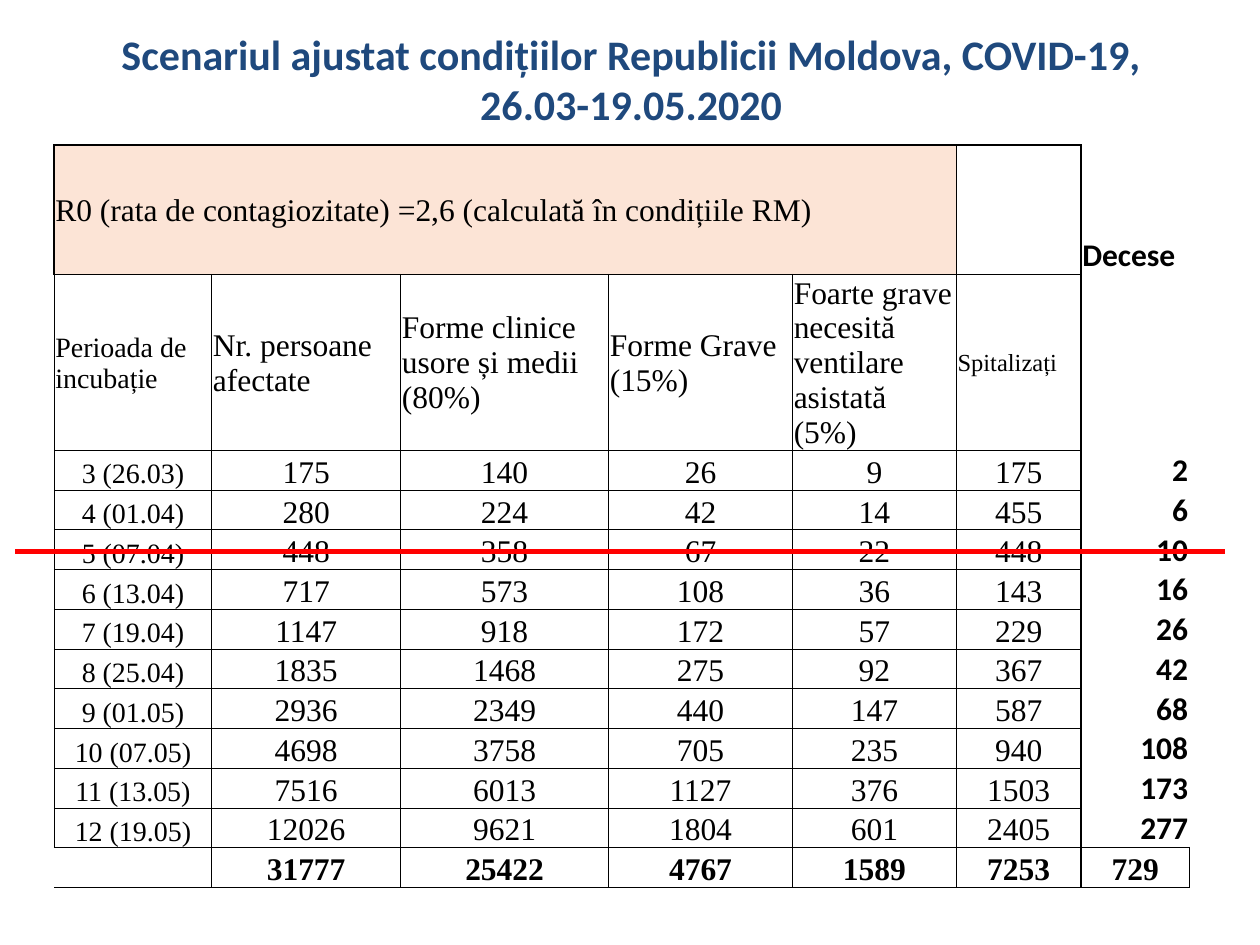
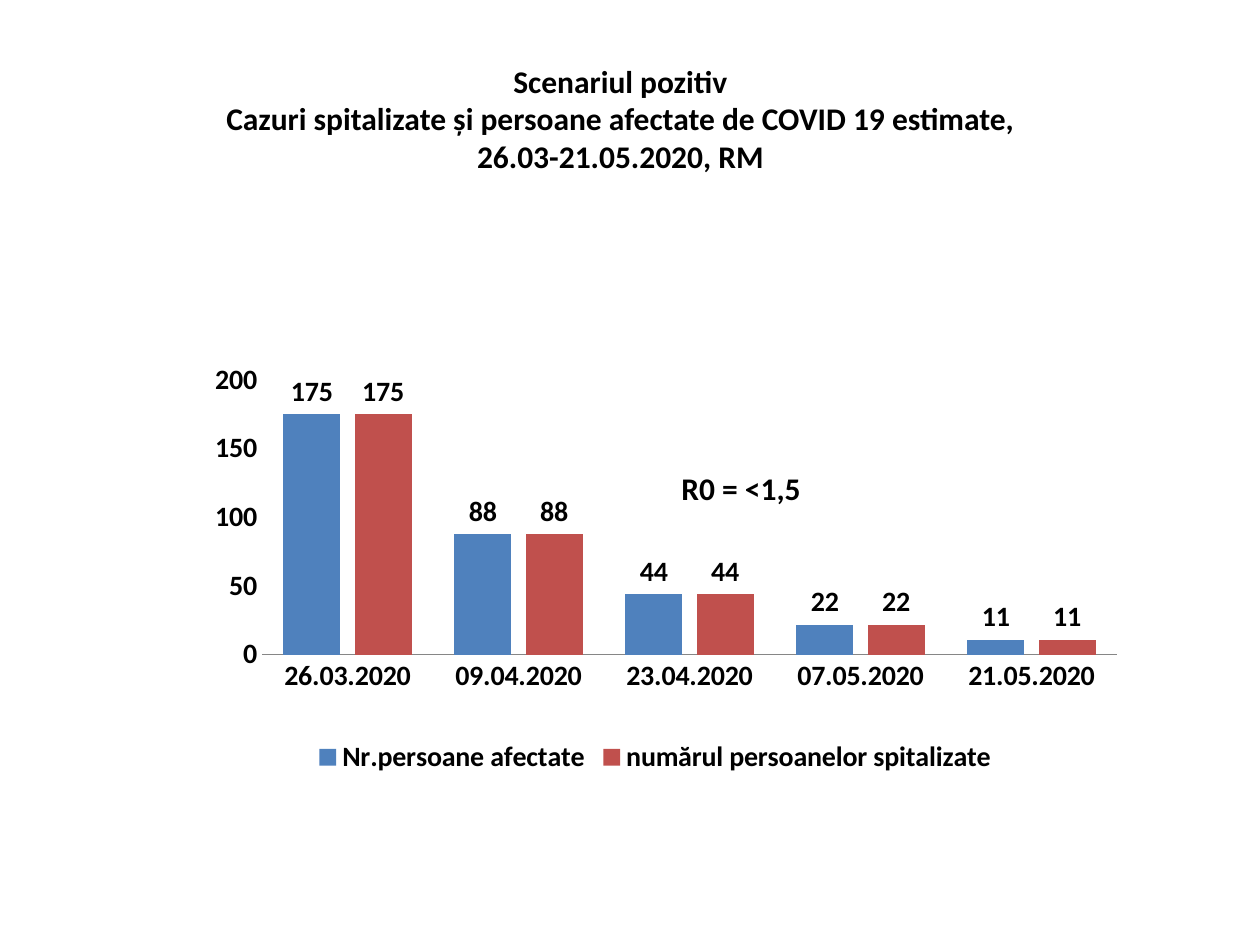
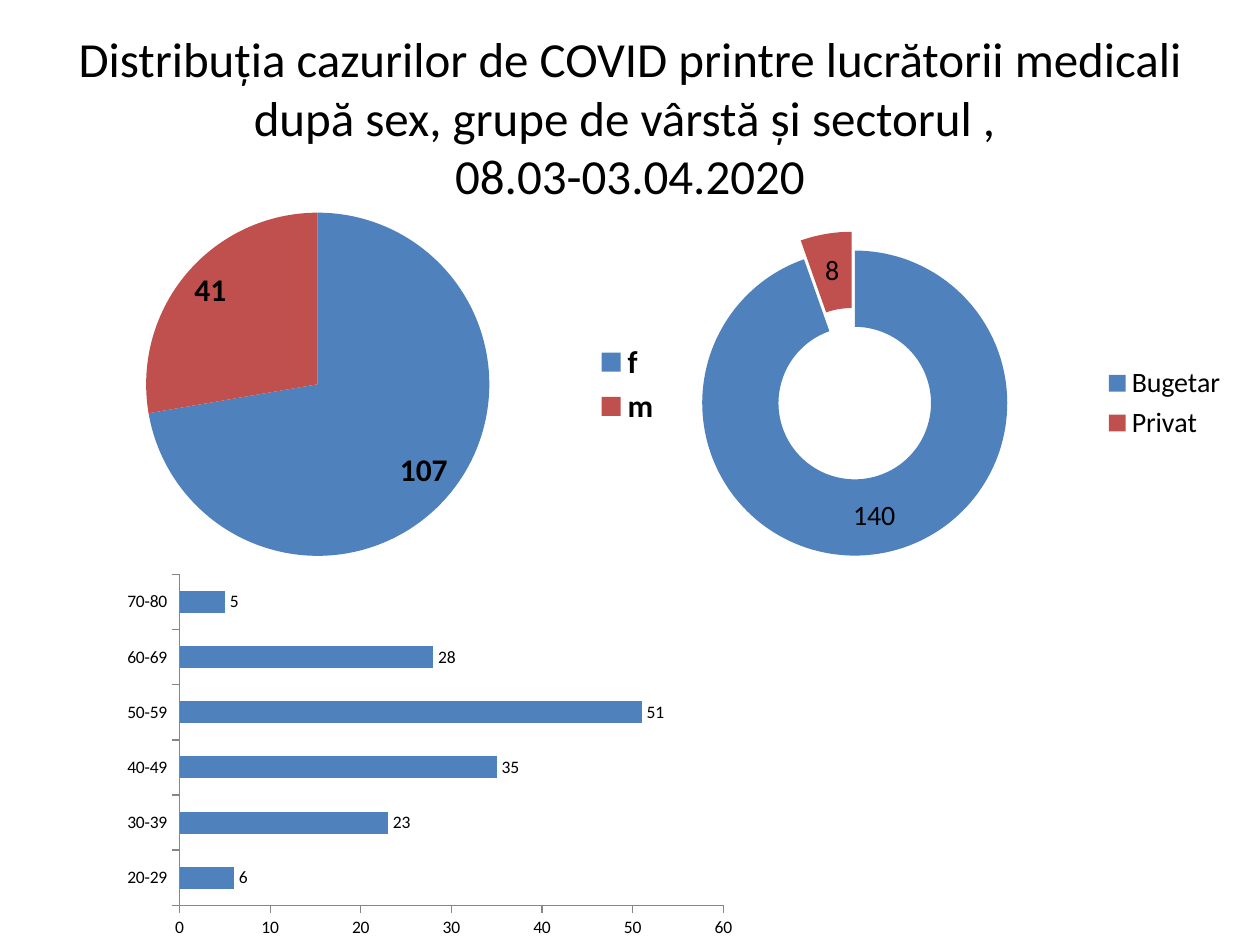
from dataclasses import dataclass

from pptx import Presentation
from pptx.chart.data import CategoryChartData
from pptx.dml.color import RGBColor
from pptx.enum.chart import XL_CHART_TYPE, XL_LABEL_POSITION, XL_LEGEND_POSITION, XL_TICK_MARK
from pptx.enum.shapes import MSO_CONNECTOR
from pptx.enum.text import MSO_ANCHOR, MSO_AUTO_SIZE, PP_ALIGN
from pptx.oxml import parse_xml
from pptx.oxml.ns import nsdecls
from pptx.util import Pt

COLUMN, BAR = XL_CHART_TYPE.COLUMN_CLUSTERED, XL_CHART_TYPE.BAR_CLUSTERED
PIE, RING = XL_CHART_TYPE.PIE, XL_CHART_TYPE.DOUGHNUT
BELOW, BESIDE = XL_LEGEND_POSITION.BOTTOM, XL_LEGEND_POSITION.RIGHT
OUT_END = XL_LABEL_POSITION.OUTSIDE_END
NO_TICK, OUT_TICK = XL_TICK_MARK.NONE, XL_TICK_MARK.OUTSIDE
LEFT, CENTER, RIGHT = PP_ALIGN.LEFT, PP_ALIGN.CENTER, PP_ALIGN.RIGHT
MIDDLE, BOTTOM = MSO_ANCHOR.MIDDLE, MSO_ANCHOR.BOTTOM
TITLE_ONLY, BLANK = 5, 6
PX = 9144  # 100 px to the inch


@dataclass(frozen=True)
class Theme:
    sans: str = "Calibri"
    serif: str = "Times New Roman"
    ink: str = "000000"
    navy: str = "1F497D"
    peach: str = "FCE4D6"
    red: str = "FF0000"
    axis: str = "868686"
    series: tuple = ("4F81BD", "C0504D")
    large: int = 28
    head: int = 24
    body: int = 18
    label: int = 16
    note: int = 14
    small: int = 10
    fine: float = 0.5
    heavy: float = 1
    rule: float = 3


T = Theme()

COLS = (125, 150, 165, 146, 130, 99, 86)
ROWS = (103, 139) + (31,) * 11
LAST, STAY, DEATHS = len(ROWS) - 1, 5, 6
CELLS = (
    ("R0 (rata de contagiozitate) =2,6 (calculată în condițiile RM)",
     "", "", "", "", "", "Decese"),
    ("Perioada de incubație", "Nr. persoane afectate",
     "Forme clinice usore și medii (80%)", "Forme Grave (15%)",
     "Foarte grave necesită ventilare asistată (5%)", "Spitalizați", ""),
    ("3 (26.03)", 175, 140, 26, 9, 175, 2),
    ("4 (01.04)", 280, 224, 42, 14, 455, 6),
    ("5 (07.04)", 448, 358, 67, 22, 448, 10),
    ("6 (13.04)", 717, 573, 108, 36, 143, 16),
    ("7 (19.04)", 1147, 918, 172, 57, 229, 26),
    ("8 (25.04)", 1835, 1468, 275, 92, 367, 42),
    ("9 (01.05)", 2936, 2349, 440, 147, 587, 68),
    ("10 (07.05)", 4698, 3758, 705, 235, 940, 108),
    ("11 (13.05)", 7516, 6013, 1127, 376, 1503, 173),
    ("12 (19.05)", 12026, 9621, 1804, 601, 2405, 277),
    ("", 31777, 25422, 4767, 1589, 7253, 729),
)


def rgb(code):
    return RGBColor.from_string(code)


def emu(box):
    return [n * PX for n in box]


def style(font, size, color=T.ink, bold=False, face=T.sans):
    font.name, font.size, font.bold = face, Pt(size), bold
    font.color.rgb = rgb(color)


def write(frame, text, size, align=CENTER, **look):
    frame.text = text
    for para in frame.paragraphs:
        para.alignment = align
        for run in para.runs:
            style(run.font, size, **look)


def add_title(slide, box, text, size, **look):
    title = slide.shapes.title
    title.left, title.top, title.width, title.height = emu(box)
    frame = title.text_frame
    write(frame, text, size, **look)
    frame.auto_size = MSO_AUTO_SIZE.NONE
    frame.vertical_anchor = MIDDLE


def add_text(slide, box, text, align=LEFT):
    frame = slide.shapes.add_textbox(*emu(box)).text_frame
    frame.word_wrap = True
    write(frame, text, T.body, align, bold=True)


def edges(row, col):
    """Return the line width of each side that a cell draws."""
    if col == DEATHS and row < LAST:
        sides = {"L": T.heavy}
    else:
        sides = dict.fromkeys("LRTB", T.heavy if row in (0, LAST) else T.fine)
    if row == 1 and col < DEATHS:
        sides["T"] = T.heavy
    if row == LAST - 1:
        sides["B"] = T.heavy
    if col == STAY:
        sides["R"] = T.heavy
    if row == LAST and col == 0:
        del sides["L"]
    return sides


def draw_edges(cell, sides):
    props = cell._tc.get_or_add_tcPr()
    for side in "LRTB":
        width = Pt(sides.get(side, 0))
        fill = (f'<a:solidFill><a:srgbClr val="{T.ink}"/></a:solidFill>'
                if width else "<a:noFill/>")
        props.append(parse_xml(
            f'<a:ln{side} {nsdecls("a")} w="{width}">{fill}</a:ln{side}>'))


def cell_look(row, col):
    """Return size, alignment, weight and face for a cell."""
    size, align = T.body, LEFT if row < 2 else CENTER
    if col == 0 and row > 0:
        size = T.label
    elif col == STAY and row == 1:
        size = T.note
    deaths = col == DEATHS and row < LAST
    if deaths and row > 1:
        align = RIGHT
    return dict(size=size, align=align, bold=deaths or row == LAST,
                face=T.sans if deaths else T.serif)


def add_forecast(slide, left, top):
    box = emu((left, top, sum(COLS), sum(ROWS)))
    table = slide.shapes.add_table(len(ROWS), len(COLS), *box).table
    table.first_row = table.horz_banding = False
    for col, width in zip(table.columns, COLS):
        col.width = width * PX
    for row, height in zip(table.rows, ROWS):
        row.height = height * PX
    for r, line in enumerate(CELLS):
        for c, value in enumerate(line):
            cell = table.cell(r, c)
            cell.margin_left = cell.margin_right = cell.margin_top = PX
            cell.margin_bottom = 0
            top_head = r == 0 and c == DEATHS
            cell.vertical_anchor = BOTTOM if r > 1 or top_head else MIDDLE
            write(cell.text_frame, str(value), **cell_look(r, c))
            draw_edges(cell, edges(r, c))
            cell.fill.background()
    table.cell(0, 0).merge(table.cell(0, STAY - 1))
    banner = table.cell(0, 0).fill
    banner.solid()
    banner.fore_color.rgb = rgb(T.peach)


def add_rule(slide, left, right, y):
    line = slide.shapes.add_connector(
        MSO_CONNECTOR.STRAIGHT, *emu((left, y, right, y)))
    line.line.color.rgb = rgb(T.red)
    line.line.width = Pt(T.rule)
    line._element.spPr.append(parse_xml(f'<a:effectLst {nsdecls("a")}/>'))


def add_chart(slide, box, kind, cats, series, size, bold=False, legend=None):
    data = CategoryChartData(number_format="0")
    data.categories = cats
    for name, values in series:
        data.add_series(name, values)
    chart = slide.shapes.add_chart(kind, *emu(box), data).chart
    chart.has_title = False
    style(chart.font, size, bold=bold)
    chart.has_legend = legend is not None
    if legend is not None:
        chart.legend.position = legend
        chart.legend.include_in_layout = False
    for item in chart.plots[0].series:
        item.data_labels.show_value = True
        style(item.data_labels.font, size, bold=bold)
    return chart


def paint(part, color):
    part.format.fill.solid()
    part.format.fill.fore_color.rgb = rgb(color)


def add_bars(slide, box, kind, cats, series, size, gap, overlap, tick,
             top, step, **look):
    chart = add_chart(slide, box, kind, cats, series, size, **look)
    plot = chart.plots[0]
    plot.vary_by_categories = False
    plot.gap_width, plot.overlap = gap, overlap
    for item, color in zip(plot.series, T.series):
        paint(item, color)
        item.data_labels.position = OUT_END
    for axis in (chart.category_axis, chart.value_axis):
        axis.major_tick_mark, axis.minor_tick_mark = tick, NO_TICK
        axis.has_major_gridlines = False
        axis.format.line.color.rgb = rgb(T.axis)
    scale = chart.value_axis
    scale.minimum_scale, scale.maximum_scale = 0, top
    scale.major_unit = step
    return chart


def add_round(slide, box, kind, cats, values, size, **look):
    """Add a pie or ring with one colour for each slice."""
    chart = add_chart(slide, box, kind, cats, [("Series 1", values)], size,
                      legend=BESIDE, **look)
    plot = chart.plots[0]
    plot.vary_by_categories = True
    for i, color in enumerate(T.series):
        paint(plot.series[0].points[i], color)
    return chart


def pull_slice(chart, index, share):
    mark = chart._chartSpace.xpath(f'.//c:dPt/c:idx[@val="{index}"]')[0]
    mark.addnext(parse_xml(f'<c:explosion {nsdecls("c")} val="{share}"/>'))


def set_plot(chart, x, y, w, h):
    """Fix the inner plot area as shares of the chart."""
    area = chart._chartSpace.chart.plotArea
    for old in area.xpath("c:layout"):
        area.remove(old)
    parts = "".join(f'<c:{tag} val="{value}"/>' for tag, value in (
        ("layoutTarget", "inner"), ("xMode", "edge"), ("yMode", "edge"),
        ("x", x), ("y", y), ("w", w), ("h", h)))
    area.insert(0, parse_xml(
        f'<c:layout {nsdecls("c")}><c:manualLayout>{parts}'
        '</c:manualLayout></c:layout>'))


def forecast_slide(slide):
    add_title(slide, (51, 0, 900, 125),
              "Scenariul ajustat condițiilor Republicii Moldova, COVID-19, "
              "26.03-19.05.2020", T.head, color=T.navy, bold=True)
    add_forecast(slide, 43, 115)
    add_rule(slide, 12, 972, 438)


def positive_slide(slide):
    cases = (175, 88, 44, 22, 11)
    chart = add_bars(
        slide, (130, 288, 780, 331), COLUMN,
        ("26.03.2020", "09.04.2020", "23.04.2020", "07.05.2020", "21.05.2020"),
        (("Nr.persoane afectate", cases),
         ("numărul persoanelor spitalizate", cases)),
        T.label, 75, -25, NO_TICK, 200, 50, bold=True, legend=BELOW)
    chart.value_axis.format.line.fill.background()
    set_plot(chart, 0.1, 0.04, 0.87, 0.66)
    add_text(slide, (146, 44, 693, 101),
             "Scenariul pozitiv\nCazuri spitalizate și persoane afectate de "
             "COVID 19 estimate, 26.03-21.05.2020, RM", CENTER)
    add_text(slide, (531, 367, 157, 40), "R0 = <1,5")


def staff_slide(slide):
    add_title(slide, (50, 30, 900, 125),
              "Distribuția cazurilor de COVID printre lucrătorii medicali "
              "după sex, grupe de vârstă și sectorul , \v08.03-03.04.2020",
              T.large)
    add_bars(slide, (91, 450, 500, 300), BAR,
             ("20-29", "30-39", "40-49", "50-59", "60-69", "70-80"),
             [("Series 1", (6, 23, 35, 51, 28, 5))],
             T.small, 150, 0, OUT_TICK, 60, 10)
    add_round(slide, (35, 155, 500, 300), PIE, ("f", "m"), (107, 41),
              T.body, bold=True)
    ring = add_round(slide, (484, 170, 500, 300), RING,
                     ("Bugetar", "Privat"), (140, 8), T.label)
    pull_slice(ring, 1, 25)


def main():
    deck = Presentation()
    deck.slide_width, deck.slide_height = emu((1000, 750))
    for layout, build in ((TITLE_ONLY, forecast_slide),
                          (BLANK, positive_slide),
                          (TITLE_ONLY, staff_slide)):
        build(deck.slides.add_slide(deck.slide_layouts[layout]))
    deck.save("out.pptx")


if __name__ == "__main__":
    main()
